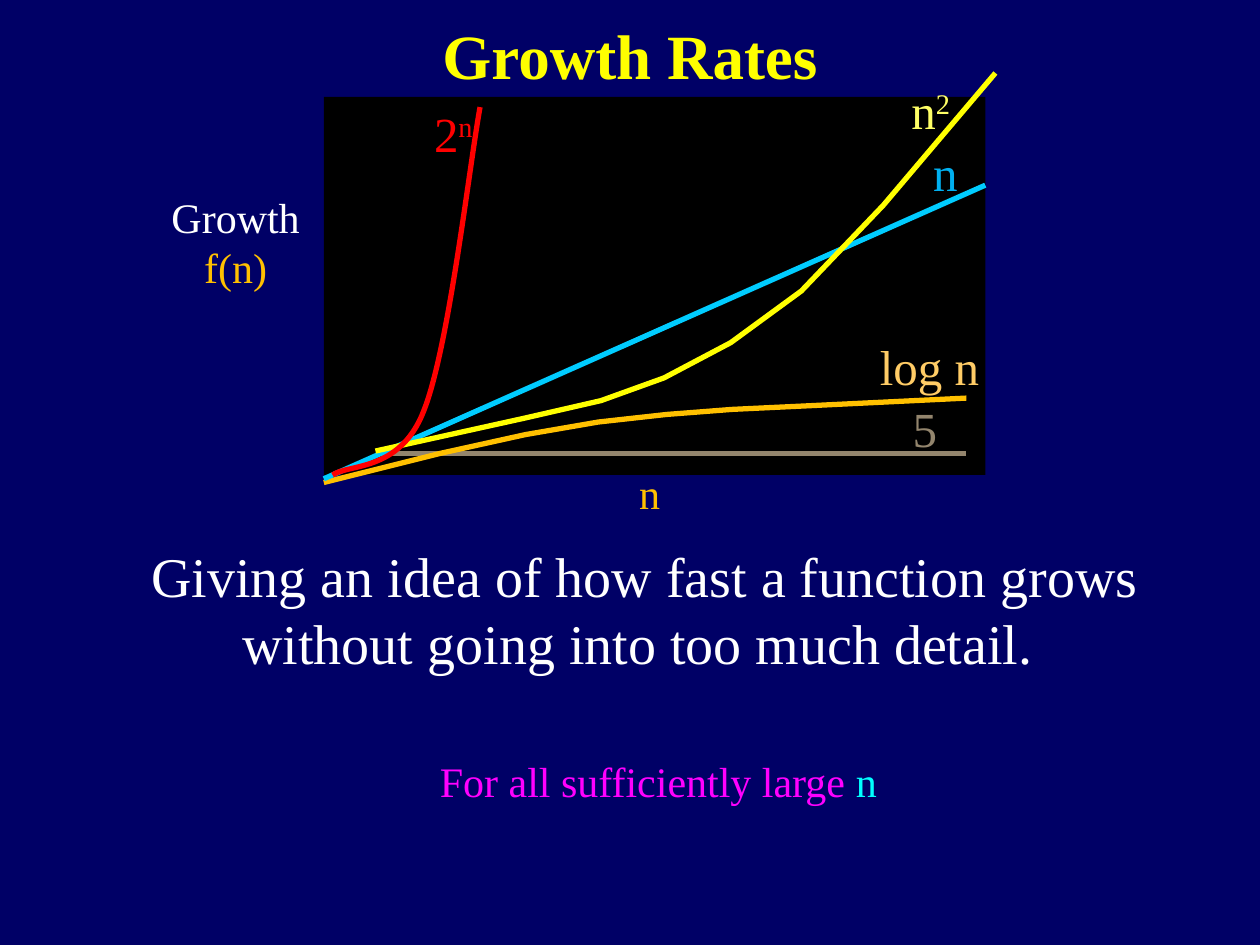
from lxml import etree
from pptx import Presentation
from pptx.dml.color import RGBColor
from pptx.enum.shapes import MSO_CONNECTOR as Link, MSO_SHAPE as Shape
from pptx.enum.text import MSO_ANCHOR as Anchor, PP_ALIGN as Align
from pptx.oxml.ns import qn
from pptx.util import Inches, Pt

FONT = "Times New Roman"
HUE = {
    "back": "000066", "plot": "000000", "white": "FFFFFF", "title": "FFFF00",
    "pink": "FF00FF", "aqua": "00FFFF", "gold": "FFC000", "const": "93856D",
    "log": "FFCC66", "line": "00CCFF", "blue": "00B0F0", "square": "FFFF66",
    "red": "FF0000",
}

# Content: a run is (text, colour) or (text, colour, "sup")
TITLE = [[("Growth Rates", "title")]]
IDEA = [[("Giving an idea of how fast a function grows "
          "without going into too much detail. ", "white")]]
NOTE = [[("For all sufficiently large ", "pink"), ("n", "aqua")]]
X_NAME = [[("n", "gold")]]
Y_NAME = [[("Growth", "white")], [("f(n)", "gold")]]

PLOT = (2.57, 0.77, 5.25, 3)

# Curve labels: runs, box, side inset, alignment
LABELS = [
    ([("5", "const")], (6.94, 3.11, 0.8, 0.57), 0.3, Align.CENTER),
    ([("log n", "log")], (6.67, 2.62, 1.4, 0.57), 0.3, Align.RIGHT),
    ([("n", "blue")], (7.1, 1.08, 0.8, 0.57), 0.3, Align.RIGHT),
    ([("n", "square"), ("2", "square", "sup")],
     (6.91, 0.59, 0.93, 0.57), 0.3, Align.RIGHT),
    ([("2", "red"), ("n", "red", "sup")],
     (3.32, 0.77, 0.53, 0.57), 0.1, Align.RIGHT),
]

# Curves from back to front: kind, colour, points
CURVES = [
    ("straight", "const", [(3, 3.6), (7.67, 3.6)]),
    ("bent", "gold", [(7.67, 3.16), (6.44, 3.22), (5.81, 3.25), (5.29, 3.29),
                      (4.75, 3.35), (4.17, 3.45), (3.49, 3.6), (2.57, 3.83)]),
    ("straight", "line", [(7.82, 1.47), (2.57, 3.8)]),
    ("bent", "title", [(2.98, 3.58), (4.16, 3.32), (4.77, 3.18), (5.27, 3),
                       (5.8, 2.72), (6.36, 2.31), (7.01, 1.63), (7.9, 0.58)]),
    ("smooth", "red", [(2.64, 3.77), (2.76, 3.68), (3.17, 3.75), (3.36, 3.27),
                       (3.56, 2.78), (3.72, 1.35), (3.81, 0.85)]),
]


def rgb(name):
    return RGBColor.from_string(HUE[name])


def write(frame, paras, size, align=Align.CENTER, gap=0, bold=False):
    frame.vertical_anchor = Anchor.TOP
    for i, runs in enumerate(paras):
        para = frame.paragraphs[0] if i == 0 else frame.add_paragraph()
        para.alignment = align
        para.space_before = Pt(gap)
        for text, hue, *sup in runs:
            run = para.add_run()
            run.text = text
            font = run.font
            font.name, font.size, font.bold = FONT, Pt(size), bold
            font.color.rgb = rgb(hue)
            if sup:
                font._element.set("baseline", "30000")


def add_text(slide, box, paras, size, align=Align.CENTER, gap=0,
             wrap=True, inset=0.1):
    frame = slide.shapes.add_textbox(*map(Inches, box)).text_frame
    frame.word_wrap = wrap
    frame.margin_left = frame.margin_right = Inches(inset)
    write(frame, paras, size, align, gap)


def round_off(shape):
    """Turn each three line steps of an outline into one cubic curve."""
    steps = list(shape._element.iter(qn("a:lnTo")))
    for i in range(0, len(steps), 3):
        cubic = etree.Element(qn("a:cubicBezTo"))
        steps[i].addprevious(cubic)
        for step in steps[i:i + 3]:
            cubic.append(step[0])
            step.getparent().remove(step)


def add_curve(slide, kind, hue, points):
    spots = [(Inches(x), Inches(y)) for x, y in points]
    if kind == "straight":
        curve = slide.shapes.add_connector(Link.STRAIGHT, *spots[0], *spots[1])
        etree.SubElement(curve._element.spPr, qn("a:effectLst"))
    else:
        pen = slide.shapes.build_freeform(*spots[0])
        pen.add_line_segments(spots[1:], close=False)
        curve = pen.convert_to_shape()
        curve.fill.background()
        curve.shadow.inherit = False
        if kind == "smooth":
            round_off(curve)
    curve.line.color.rgb = rgb(hue)
    curve.line.width = Pt(3)


def main():
    deck = Presentation()
    deck.slide_width, deck.slide_height = Inches(10), Inches(7.5)
    slide = deck.slides.add_slide(deck.slide_layouts[5])
    slide.background.fill.solid()
    slide.background.fill.fore_color.rgb = rgb("back")

    # Title and statements
    title = slide.shapes.title
    title.left, title.top, title.width, title.height = map(
        Inches, (0.75, 0.08, 8.5, 1.25))
    write(title.text_frame, TITLE, 36, bold=True)
    add_text(slide, (1.08, 4.25, 8.08, 1.92), IDEA, 32, gap=6.4)
    add_text(slide, (3.25, 5.95, 3.95, 0.44), NOTE, 24, gap=4.8)

    # Plot area and axis names
    plot = slide.shapes.add_shape(Shape.RECTANGLE, *map(Inches, PLOT))
    plot.shadow.inherit = False
    plot.fill.solid()
    plot.fill.fore_color.rgb = rgb("plot")
    plot.line.fill.background()
    add_text(slide, (4.97, 3.66, 0.37, 0.5), X_NAME, 24, wrap=False)
    add_text(slide, (0.91, 1.47, 1.92, 0.91), Y_NAME, 24)

    # Curves and their labels
    for curve in CURVES:
        add_curve(slide, *curve)
    for runs, box, inset, align in LABELS:
        add_text(slide, box, [runs], 28, align, wrap=False, inset=inset)

    deck.save("out.pptx")


if __name__ == "__main__":
    main()
